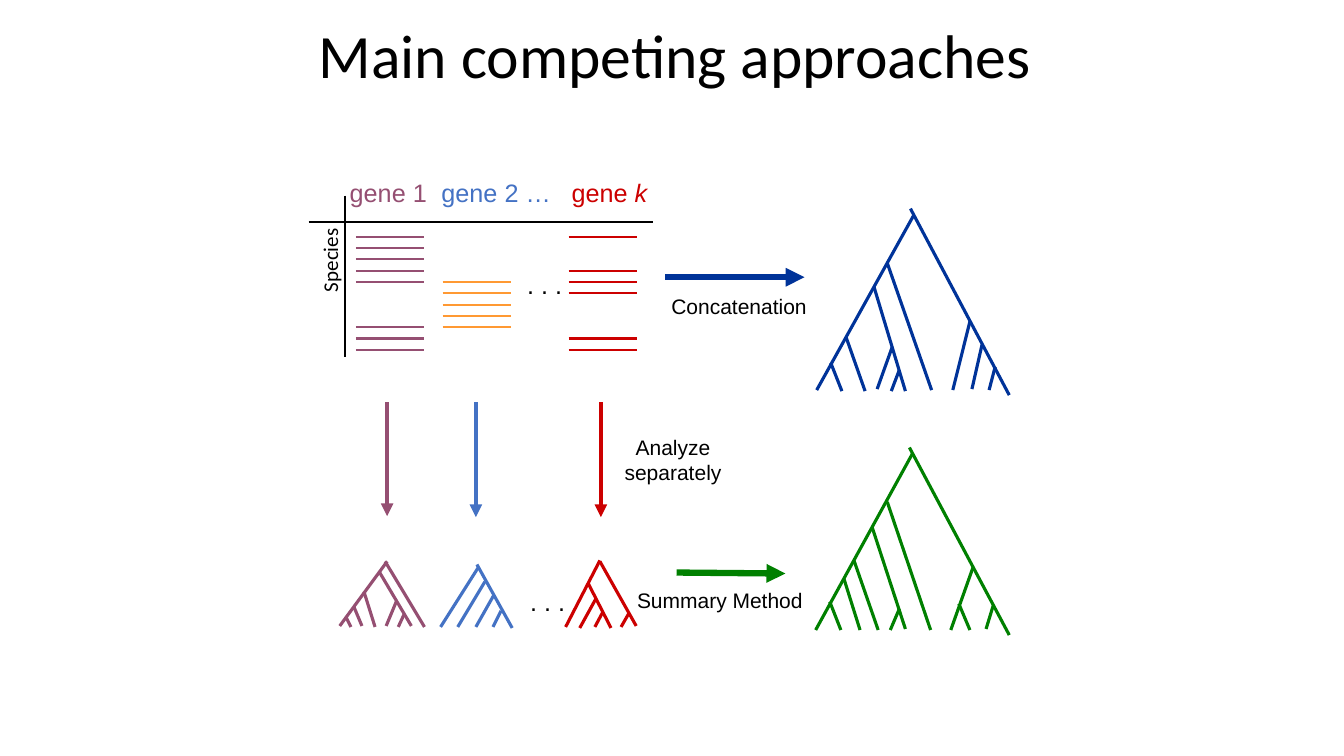
from dataclasses import dataclass

from lxml.etree import SubElement
from pptx import Presentation
from pptx.dml.color import RGBColor
from pptx.enum.shapes import MSO_CONNECTOR
from pptx.enum.text import MSO_ANCHOR, MSO_AUTO_SIZE, PP_ALIGN
from pptx.oxml.ns import qn
from pptx.slide import Slide
from pptx.text.text import Font
from pptx.util import Inches, Pt

COLORS = {
    "black": "000000",
    "purple": "954F72",
    "blue": "4472C4",
    "red": "CC0000",
    "orange": "FF9933",
    "navy": "003399",
    "green": "008000",
}
Segment = tuple[float, float, float, float]  # x1, y1, x2, y2 in inches


@dataclass(frozen=True)
class LineSet:
    color: str
    segments: tuple[Segment, ...]
    width: float = 2.25
    arrow: bool = False


@dataclass(frozen=True)
class Alignment:
    color: str
    left: float
    rows: tuple[int, ...]


@dataclass(frozen=True)
class Label:
    lines: tuple[str, ...]
    left: float
    top: float
    width: float
    height: float
    size: float = 15
    font: str = "Arial"
    align: PP_ALIGN = PP_ALIGN.LEFT
    rotation: float = 0


@dataclass(frozen=True)
class HeaderRun:
    text: str
    color: str
    italic: bool = False


ROW_TOP, ROW_PITCH, SEQUENCE_LENGTH = 2.35, 1.12 / 10, 0.68
ALIGNMENTS = (
    Alignment("purple", 3.53, (0, 1, 2, 3, 4, 8, 9, 10)),
    Alignment("orange", 4.39, (4, 5, 6, 7, 8)),
    Alignment("red", 5.64, (0, 3, 4, 5, 9, 10)),
)

GENE_TREES = (
    LineSet("purple", (
        (3.84, 5.57, 3.37, 6.21), (3.82, 5.57, 4.21, 6.22), (3.76, 5.67, 4.08, 6.21),
        (3.61, 5.87, 3.72, 6.22), (3.51, 6.02, 3.59, 6.21), (3.93, 5.97, 3.83, 6.21),
        (4.01, 6.09, 3.95, 6.22), (3.43, 6.12, 3.48, 6.22),
    )),
    LineSet("blue", (
        (4.73, 5.6, 5.08, 6.23), (4.75, 5.62, 4.37, 6.22), (4.9, 5.9, 4.72, 6.22),
        (4.97, 6.06, 4.89, 6.22), (4.81, 5.77, 4.54, 6.22),
    )),
    LineSet("red", (
        (5.95, 5.56, 5.61, 6.22), (5.95, 5.57, 6.31, 6.21), (5.83, 5.78, 6.06, 6.23),
        (6.24, 6.08, 6.16, 6.22), (5.98, 6.07, 5.9, 6.22), (5.91, 5.94, 5.75, 6.23),
    )),
)
SPECIES_TREES = (
    LineSet("navy", (
        (9.06, 2.14, 8.1, 3.87), (9.03, 2.07, 10.01, 3.92), (8.8, 2.61, 9.24, 3.87),
        (9.62, 3.19, 9.45, 3.87), (9.74, 3.42, 9.64, 3.86), (9.87, 3.64, 9.81, 3.87),
        (8.67, 2.85, 8.98, 3.88), (8.39, 3.34, 8.58, 3.88), (8.24, 3.6, 8.35, 3.88),
        (8.85, 3.44, 8.7, 3.86), (8.92, 3.67, 8.84, 3.88),
    )),
    LineSet("green", (
        (9.05, 4.5, 8.09, 6.25), (9.02, 4.44, 10.01, 6.3), (8.8, 4.98, 9.23, 6.25),
        (9.65, 5.63, 9.43, 6.25), (9.51, 5.99, 9.62, 6.25), (9.85, 6.01, 9.78, 6.24),
        (8.65, 5.23, 8.98, 6.24), (8.37, 5.74, 8.53, 6.25), (8.23, 5.97, 8.34, 6.25),
        (8.47, 5.56, 8.71, 6.25), (8.92, 6.04, 8.83, 6.25),
    )),
)
TABLE_AXES = LineSet("black", ((3.42, 1.94, 3.42, 3.54), (3.06, 2.2, 6.48, 2.2)), 1.5)
ARROWS = (
    LineSet("purple", ((3.84, 3.99, 3.84, 5.12),), 3, True),
    LineSet("blue", ((4.72, 3.99, 4.72, 5.13),), 3, True),
    LineSet("red", ((5.96, 3.99, 5.96, 5.13),), 3, True),
    LineSet("navy", ((6.6, 2.75, 7.98, 2.75),), 4.5, True),
    LineSet("green", ((6.71, 5.68, 7.79, 5.69),), 4.5, True),
)

LABELS = (
    Label((". . .",), 5.13, 2.62, 0.55, 0.4, 18),
    Label((". . .",), 5.16, 5.77, 0.55, 0.4, 18),
    Label(("Analyze", "separately"), 6.09, 4.26, 1.17, 0.61, align=PP_ALIGN.CENTER),
    Label(("Summary Method",), 6.18, 5.78, 1.92, 0.35, align=PP_ALIGN.CENTER),
    Label(("Concatenation",), 6.56, 2.86, 1.56, 0.35),
    Label(("Species",), 2.85, 2.4, 0.84, 0.35, font="Calibri", rotation=270),
)
HEADER_RUNS = (
    HeaderRun("gene 1\t", "purple"),
    HeaderRun("gene 2 …\t", "blue"),
    HeaderRun("gene ", "red"),
    HeaderRun("k", "red", True),
)
HEADER_TABS = (0.91, 2.2)


def rgb(color: str) -> RGBColor:
    return RGBColor.from_string(COLORS[color])


def format_font(font: Font, name: str, size: float, color: str = "black") -> None:
    font.name = name
    font.size = Pt(size)
    font.color.rgb = rgb(color)


def draw_lines(slide: Slide, lines: LineSet) -> None:
    for segment in lines.segments:
        connector = slide.shapes.add_connector(
            MSO_CONNECTOR.STRAIGHT, *(Inches(value) for value in segment))
        connector.line.color.rgb = rgb(lines.color)
        connector.line.width = Pt(lines.width)
        if lines.arrow:
            SubElement(connector.line._get_or_add_ln(), qn("a:tailEnd"), type="triangle")
        SubElement(connector._element.spPr, qn("a:effectLst"))


def draw_alignment(slide: Slide, alignment: Alignment) -> None:
    """Draw one gene's sequences; skipped rows are species lacking the gene."""
    right = alignment.left + SEQUENCE_LENGTH
    heights = [ROW_TOP + row * ROW_PITCH for row in alignment.rows]
    segments = tuple((alignment.left, y, right, y) for y in heights)
    draw_lines(slide, LineSet(alignment.color, segments, 1.5))


def draw_label(slide: Slide, label: Label) -> None:
    box = slide.shapes.add_textbox(Inches(label.left), Inches(label.top),
                                   Inches(label.width), Inches(label.height))
    box.rotation = label.rotation
    frame = box.text_frame
    frame.word_wrap = False
    for index, line in enumerate(label.lines):
        paragraph = frame.add_paragraph() if index else frame.paragraphs[0]
        paragraph.alignment = label.align
        run = paragraph.add_run()
        run.text = line
        format_font(run.font, label.font, label.size)


def draw_gene_header(slide: Slide) -> None:
    box = slide.shapes.add_textbox(Inches(3.37), Inches(1.71), Inches(3.18), Inches(0.4))
    box.text_frame.word_wrap = True
    box.text_frame.margin_right = 0
    paragraph = box.text_frame.paragraphs[0]
    tab_list = SubElement(paragraph._p.get_or_add_pPr(), qn("a:tabLst"))
    for position in HEADER_TABS:
        SubElement(tab_list, qn("a:tab"), pos=str(Inches(position)), algn="l")
    for header_run in HEADER_RUNS:
        run = paragraph.add_run()
        run.text = header_run.text
        format_font(run.font, "Arial", 18, header_run.color)
        run.font.italic = header_run.italic


def draw_title(slide: Slide) -> None:
    title = slide.shapes.title
    title.left, title.top = Inches(3.06), Inches(0.11)
    title.width, title.height = Inches(8.09), Inches(0.94)
    frame = title.text_frame
    frame.auto_size = MSO_AUTO_SIZE.NONE
    frame.vertical_anchor = MSO_ANCHOR.MIDDLE
    paragraph = frame.paragraphs[0]
    paragraph.alignment = PP_ALIGN.LEFT
    paragraph.line_spacing = 0.9
    run = paragraph.add_run()
    run.text = "Main competing approaches"
    format_font(run.font, "Calibri", 44)


def main() -> None:
    presentation = Presentation()
    presentation.slide_width = Inches(13.33)
    presentation.slide_height = Inches(7.5)
    slide = presentation.slides.add_slide(presentation.slide_layouts[5])
    draw_title(slide)
    for lines in (*ARROWS, *GENE_TREES, *SPECIES_TREES, TABLE_AXES):
        draw_lines(slide, lines)
    for alignment in ALIGNMENTS:
        draw_alignment(slide, alignment)
    draw_gene_header(slide)
    for label in LABELS:
        draw_label(slide, label)
    presentation.save("out.pptx")


if __name__ == "__main__":
    main()
